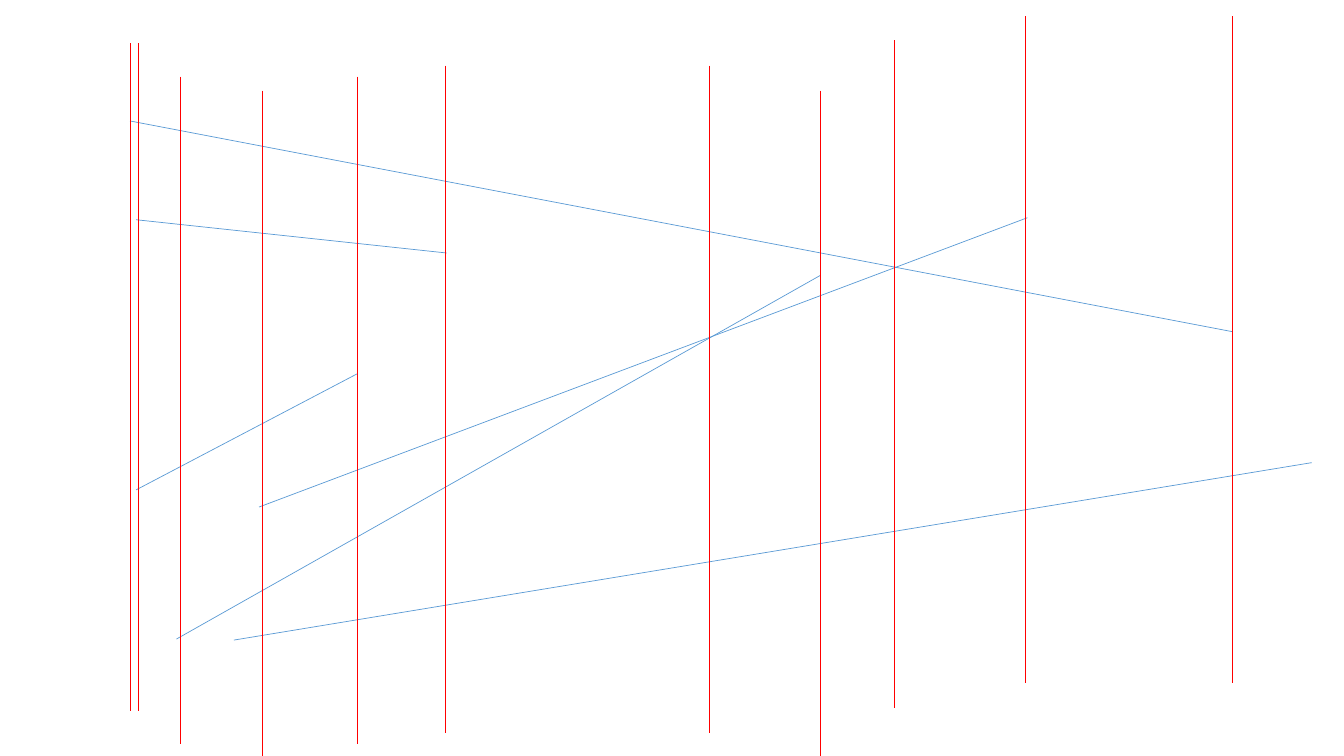
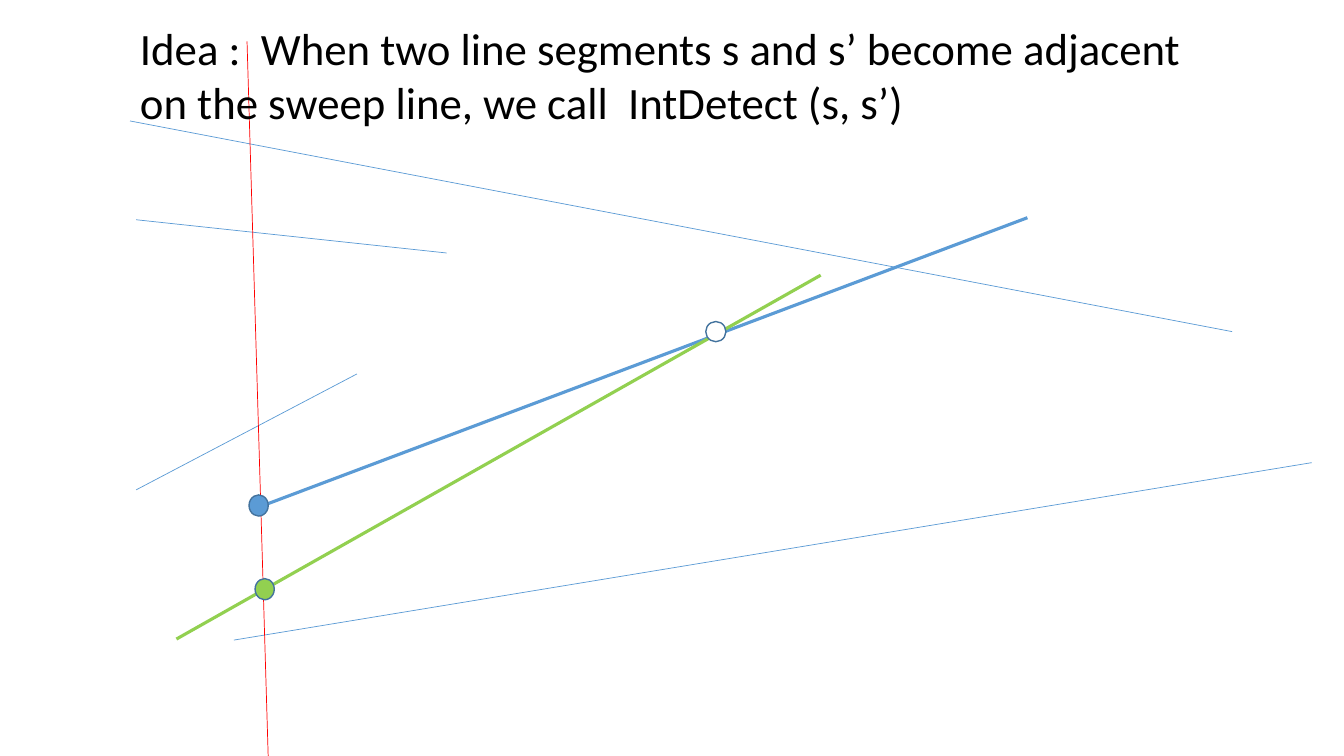
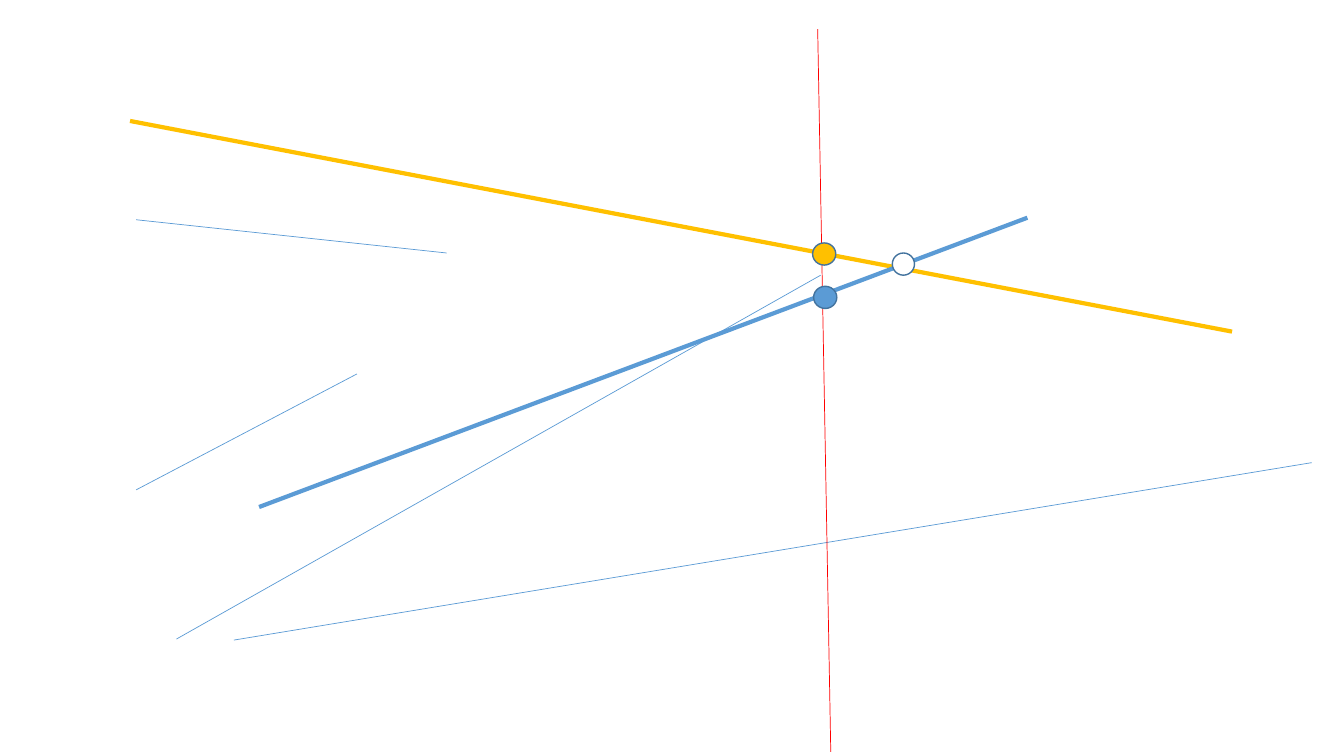
from dataclasses import dataclass

from lxml import etree
from pptx import Presentation
from pptx.dml.color import RGBColor
from pptx.enum.shapes import MSO_CONNECTOR, MSO_SHAPE
from pptx.enum.text import MSO_AUTO_SIZE
from pptx.oxml.ns import qn
from pptx.util import Inches, Pt

STRAIGHT = MSO_CONNECTOR.STRAIGHT
OVAL = MSO_SHAPE.OVAL
FIT_SHAPE = MSO_AUTO_SIZE.SHAPE_TO_FIT_TEXT
BLANK_LAYOUT = 6


@dataclass(frozen=True)
class Theme:
    font: str = "Calibri"
    heading_size: float = 32
    text: str = "000000"
    blue: str = "5B9BD5"
    green: str = "92D050"
    gold: str = "FFC000"
    red: str = "FF0000"
    white: str = "FFFFFF"
    outline: str = "43739E"
    thin: float = 0.5
    dot_line: float = 1


THEME = Theme()

# The segment set shared by all slides: start and end in inches
SEGMENTS = {
    "upper left": ((1.35, 2.18), (4.43, 2.51)),
    "middle left": ((1.35, 4.86), (3.54, 3.71)),
    "falling": ((1.29, 1.2), (12.22, 3.29)),
    "rising": ((2.57, 5.03), (10.19, 2.16)),
    "bottom": ((2.32, 6.35), (13.01, 4.59)),
    "steep": ((1.75, 6.34), (8.14, 2.73)),
}

# Vertical sweep positions: x and top in inches, all of one length
SWEEP_LENGTH = 6.62
SWEEPS = [
    (1.29, 0.43), (1.37, 0.43), (10.17, 0.16), (8.87, 0.4),
    (2.6, 0.9), (7.04, 0.65), (3.54, 0.76), (4.42, 0.65),
    (12.22, 0.16), (1.79, 0.76), (8.14, 0.9),
]


class Deck:
    def __init__(self, theme):
        self.theme = theme
        self.presentation = Presentation()
        self.presentation.slide_width = Inches(13.33)
        self.presentation.slide_height = Inches(7.5)
        self.slide = None

    def new_slide(self):
        layout = self.presentation.slide_layouts[BLANK_LAYOUT]
        self.slide = self.presentation.slides.add_slide(layout)

    def line(self, start, end, color, width):
        points = [Inches(value) for value in (*start, *end)]
        connector = self.slide.shapes.add_connector(STRAIGHT, *points)
        connector.line.color.rgb = RGBColor.from_string(color)
        connector.line.width = Pt(width)
        properties = connector._element.find(qn("p:spPr"))
        etree.SubElement(properties, qn("a:effectLst"))

    def segments(self, highlights=None, width=0):
        """Draw the segment set; highlights maps a segment to its colour."""
        highlights = highlights or {}
        for name, (start, end) in SEGMENTS.items():
            if name in highlights:
                self.line(start, end, highlights[name], width)
            else:
                self.line(start, end, self.theme.blue, self.theme.thin)

    def sweep(self, start, end):
        self.line(start, end, self.theme.red, self.theme.thin)

    def dot(self, left, top, width, height, fill):
        box = [Inches(value) for value in (left, top, width, height)]
        shape = self.slide.shapes.add_shape(OVAL, *box)
        shape.shadow.inherit = False
        shape.fill.solid()
        shape.fill.fore_color.rgb = RGBColor.from_string(fill)
        shape.line.color.rgb = RGBColor.from_string(self.theme.outline)
        shape.line.width = Pt(self.theme.dot_line)

    def heading(self, left, top, width, height, text):
        box = [Inches(value) for value in (left, top, width, height)]
        text_frame = self.slide.shapes.add_textbox(*box).text_frame
        text_frame.word_wrap = True
        text_frame.auto_size = FIT_SHAPE
        text_frame.text = text
        font = text_frame.paragraphs[0].runs[0].font
        font.name = self.theme.font
        font.size = Pt(self.theme.heading_size)
        font.color.rgb = RGBColor.from_string(self.theme.text)


def sweep_positions(deck):
    deck.new_slide()
    deck.segments()
    for x, top in SWEEPS:
        deck.sweep((x, top), (x, top + SWEEP_LENGTH))


def first_adjacent_pair(deck):
    theme = deck.theme
    deck.new_slide()
    deck.segments({"rising": theme.blue, "steep": theme.green}, 2.25)
    deck.sweep((2.45, 0.41), (2.66, 7.5))
    # Neighbours on the sweep line
    deck.dot(2.47, 4.91, 0.19, 0.21, theme.blue)
    deck.dot(2.53, 5.74, 0.19, 0.21, theme.green)
    deck.heading(1.29, 0.16, 10.93, 1.18,
                 "Idea :  When two line segments s and s’ become adjacent "
                 "on the sweep line, we call  IntDetect (s, s’)")
    # Detected intersection
    deck.dot(7, 3.19, 0.2, 0.2, theme.white)


def second_adjacent_pair(deck):
    theme = deck.theme
    deck.new_slide()
    deck.segments({"falling": theme.gold, "rising": theme.blue}, 3)
    deck.sweep((8.11, 0.29), (8.24, 7.46))
    # Neighbours on the sweep line
    deck.dot(8.07, 2.84, 0.23, 0.22, theme.blue)
    deck.dot(8.06, 2.41, 0.23, 0.22, theme.gold)
    # Detected intersection
    deck.dot(8.85, 2.51, 0.22, 0.22, theme.white)


def main():
    deck = Deck(THEME)
    sweep_positions(deck)
    first_adjacent_pair(deck)
    second_adjacent_pair(deck)
    deck.presentation.save("out.pptx")


if __name__ == "__main__":
    main()
